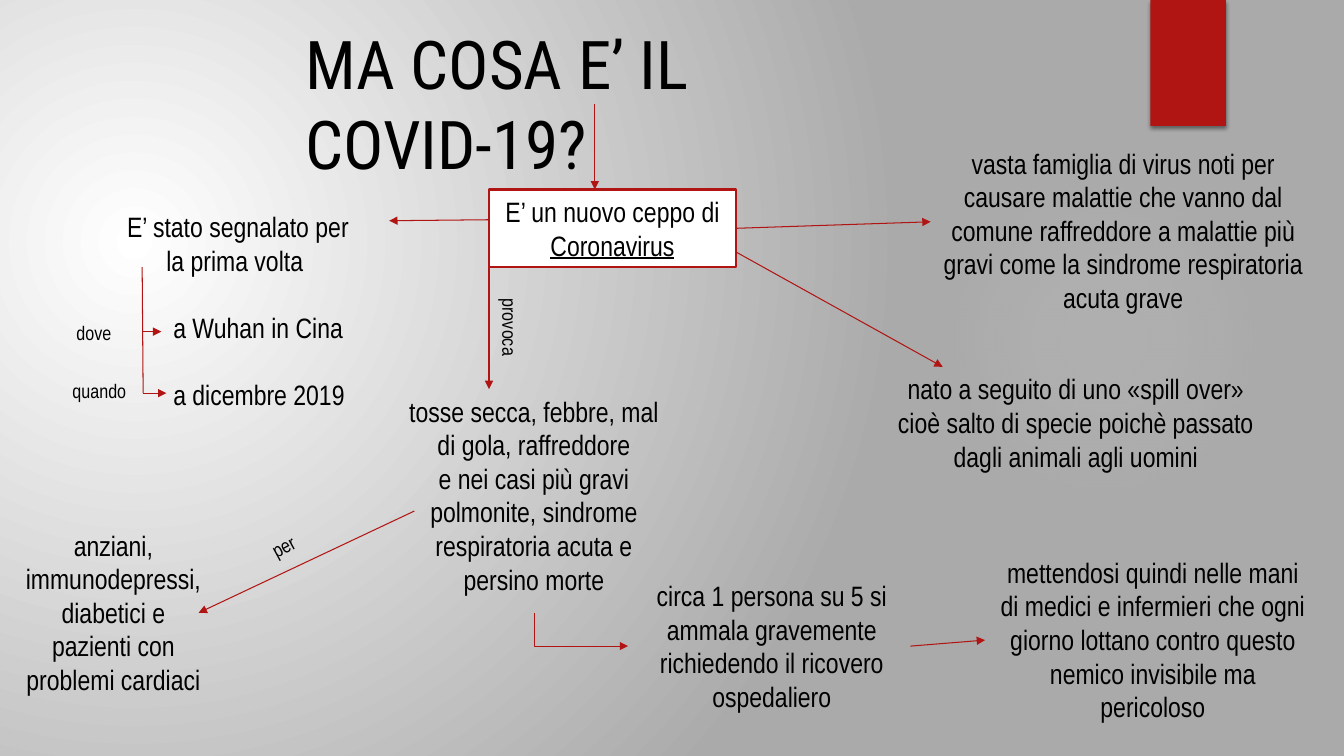
from lxml.etree import SubElement
from pptx import Presentation
from pptx.dml.color import RGBColor
from pptx.enum.shapes import MSO_CONNECTOR, MSO_SHAPE
from pptx.enum.text import MSO_ANCHOR, MSO_AUTO_SIZE, PP_ALIGN
from pptx.oxml.ns import qn
from pptx.util import Pt

PX = 9144  # 100 px to the inch
WIDE, HIGH = 1333, 750
RED = RGBColor(0xB0, 0x15, 0x13)
BLACK = RGBColor(0, 0, 0)
WHITE = RGBColor(0xFF, 0xFF, 0xFF)
GREY = RGBColor(0xAA, 0xAA, 0xAA)
PALE = RGBColor(0xF3, 0xF3, 0xF3)
BODY, HEAD = "Arial Narrow", "Roboto Condensed"


def node(parent, tag, **attrs):
    return SubElement(parent, qn(tag), {k: str(v) for k, v in attrs.items()})


def radial(owner, stops, focus):
    """Fill with a circular gradient; stops are (place, colour, opacity)."""
    owner.fill.gradient()
    grad = owner.fill._fill._gradFill
    for child in list(grad):
        grad.remove(child)
    group = node(grad, "a:gsLst")
    for place, color, alpha in stops:
        stop = node(group, "a:gs", pos=place * 1000)
        tint = node(stop, "a:srgbClr", val=color)
        if alpha < 100:
            node(tint, "a:alpha", val=alpha * 1000)
    ring = node(grad, "a:path", path="circle")
    node(ring, "a:fillToRect", **{k: v * 1000 for k, v in zip("ltrb", focus)})


def block(slide, kind, x, y, w, h):
    shape = slide.shapes.add_shape(kind, x * PX, y * PX, w * PX, h * PX)
    shape.shadow.inherit = False
    shape.line.fill.background()
    return shape


def style(para, size=20, font=BODY, align=None):
    para.alignment = align
    para.font.size = Pt(size)
    para.font.name = font
    para.font.color.rgb = BLACK


def text(slide, x, y, w, h, lines, size=20, font=BODY,
         align=PP_ALIGN.CENTER, turn=0, grow=True):
    box = slide.shapes.add_textbox(x * PX, y * PX, w * PX, h * PX)
    box.rotation = turn
    frame = box.text_frame
    frame.word_wrap = True
    if grow:
        frame.auto_size = MSO_AUTO_SIZE.SHAPE_TO_FIT_TEXT
    frame.text = "\n".join(lines)
    for para in frame.paragraphs:
        style(para, size, font, align)
    return frame


def label(slide, x, y, w, word, turn=0):
    text(slide, x, y, w, 34, [word], 14, align=None, turn=turn)


def line(slide, x1, y1, x2, y2, head=True, kind=MSO_CONNECTOR.STRAIGHT):
    link = slide.shapes.add_connector(
        kind, *(round(v * PX) for v in (x1, y1, x2, y2)))
    link.line.color.rgb = RED
    link.line.width = Pt(0.75)
    if head:
        node(link.line._get_or_add_ln(), "a:tailEnd", type="triangle")
    node(link._element.spPr, "a:effectLst")
    return link


def elbow(slide, x1, y1, x2, y2):
    """Arrow that runs down, then right: a turned and flipped bend."""
    mid_x, mid_y = (x1 + x2) / 2, (y1 + y2) / 2
    dx, dy = (x2 - x1) / 2, (y2 - y1) / 2
    link = line(slide, mid_x + dy, mid_y - dx, mid_x - dy, mid_y + dx,
                kind=MSO_CONNECTOR.ELBOW)
    props = link._element.spPr
    props.find(qn("a:prstGeom")).set("prst", "bentConnector2")
    props.find(qn("a:xfrm")).set("rot", str(270 * 60000))


def backdrop(slide):
    radial(slide.background, [(0, WHITE, 100), (100, GREY, 100)],
           (45, 65, 125, 100))
    # Soft glow
    glow = block(slide, MSO_SHAPE.OVAL, 941, 183, 308, 308)
    radial(glow, [(0, PALE, 7), (36, PALE, 6), (69, PALE, 0)], (50,) * 4)
    # Red tab with its shadow
    tab = block(slide, MSO_SHAPE.RECTANGLE, 1141, 0, 75, 125)
    tab.fill.solid()
    tab.fill.fore_color.rgb = RED
    fx = tab._element.spPr.find(qn("a:effectLst"))
    shade = node(fx, "a:outerShdw", blurRad=Pt(3), dist=Pt(2),
                 dir=90 * 60000, algn="ctr", rotWithShape=0)
    node(node(shade, "a:srgbClr", val=BLACK), "a:alpha", val=45000)


def heading(slide, x, y, w, h):
    text(slide, x, y, w, h, ["MA COSA E’ IL COVID-19?"], 48, HEAD,
         align=None, grow=False)


def core(slide, x, y, w, h):
    box = block(slide, MSO_SHAPE.RECTANGLE, x, y, w, h)
    box.fill.solid()
    box.fill.fore_color.rgb = WHITE
    box.line.color.rgb = RED
    box.line.width = Pt(1.5)
    frame = box.text_frame
    frame.word_wrap = True
    frame.vertical_anchor = MSO_ANCHOR.MIDDLE
    para = frame.paragraphs[0]
    para.add_run().text = "E’ un nuovo ceppo di "
    virus = para.add_run()
    virus.text = "Coronavirus"
    virus.font.underline = True
    style(para, align=PP_ALIGN.CENTER)
    line(slide, x + 105, y - 85, x + 105, y)
    return box


def origin(slide, x, y, w, h):
    frame = text(slide, x, y, w, h, ["E’ stato segnalato per la prima volta ",
                                     "a Wuhan in Cina", "a dicembre 2019"])
    for para in frame.paragraphs[1:]:
        para.alignment = None
        para.level = 1
        para.space_before = Pt(24)
        para._p.get_or_add_pPr().set("marL", str(50 * PX))
        para._p.get_or_add_pPr().set("indent", "0")
    line(slide, x + 373, y + 15, x + 274, y + 16)
    # Where and when
    line(slide, x + 29, y + 62, x + 30, y + 187, head=False)
    line(slide, x + 29, y + 126, x + 48, y + 126)
    line(slide, x + 30, y + 187, x + 53, y + 187)
    label(slide, x - 46, y + 110, 73, "dove")
    label(slide, x - 50, y + 168, 101, "quando")


def nature(slide, x, y, w, h, box):
    text(slide, x + 41, y, w - 41, 178, [
        "vasta famiglia di virus noti per causare malattie che vanno dal "
        "comune raffreddore a malattie più gravi come la sindrome "
        "respiratoria acuta grave"])
    text(slide, x, y + h - 111, 380, 111, [
        "nato a seguito di uno «spill over» cioè salto di specie poichè "
        "passato dagli animali agli uomini"])
    link = line(slide, x - 147, y + 87, x + 46, y + 80)
    link.begin_connect(box, 3)
    line(slide, x - 147, y + 110, x + 58, y + 224)


def symptoms(slide, x, y, w, h):
    text(slide, x, y, w, h, [
        "tosse secca, febbre, mal di gola, raffreddore",
        "e nei casi più gravi polmonite, sindrome respiratoria acuta e "
        "persino morte"])
    line(slide, x + 91, y - 136, x + 91, y)
    label(slide, x + 68, y - 73, 87, "provoca", 90)


def fragile(slide, x, y, w, h):
    text(slide, x, y, w, h, [
        "anziani, immunodepressi, diabetici e pazienti con problemi cardiaci"])
    line(slide, x + 397, y - 12, x + 183, y + 89)
    label(slide, x + 244, y - 1, 74, "per", 331.6)


def care(slide, x, y, w, h):
    text(slide, x, y + 23, 255, 145, [
        "circa 1 persona su 5 si ammala gravemente richiedendo il ricovero "
        "ospedaliero"])
    text(slide, x + w - 333, y, 333, h, [
        "mettendosi quindi nelle mani di medici e infermieri che ogni giorno "
        "lottano contro questo nemico invisibile ma pericoloso"])
    elbow(slide, x - 108, y + 62, x - 15, y + 95)
    line(slide, x + 265, y + 95, x + 339, y + 89)


def main():
    deck = Presentation()
    deck.slide_width, deck.slide_height = WIDE * PX, HIGH * PX
    slide = deck.slides.add_slide(deck.slide_layouts[6])
    backdrop(slide)
    heading(slide, 293, 17, 594, 126)
    box = core(slide, 485, 188, 245, 77)
    origin(slide, 112, 203, 248, 212)
    nature(slide, 877, 140, 433, 335, box)
    symptoms(slide, 394, 386, 271, 212)
    fragile(slide, 14, 519, 197, 178)
    care(slide, 638, 546, 672, 178)
    deck.save("out.pptx")


if __name__ == "__main__":
    main()
